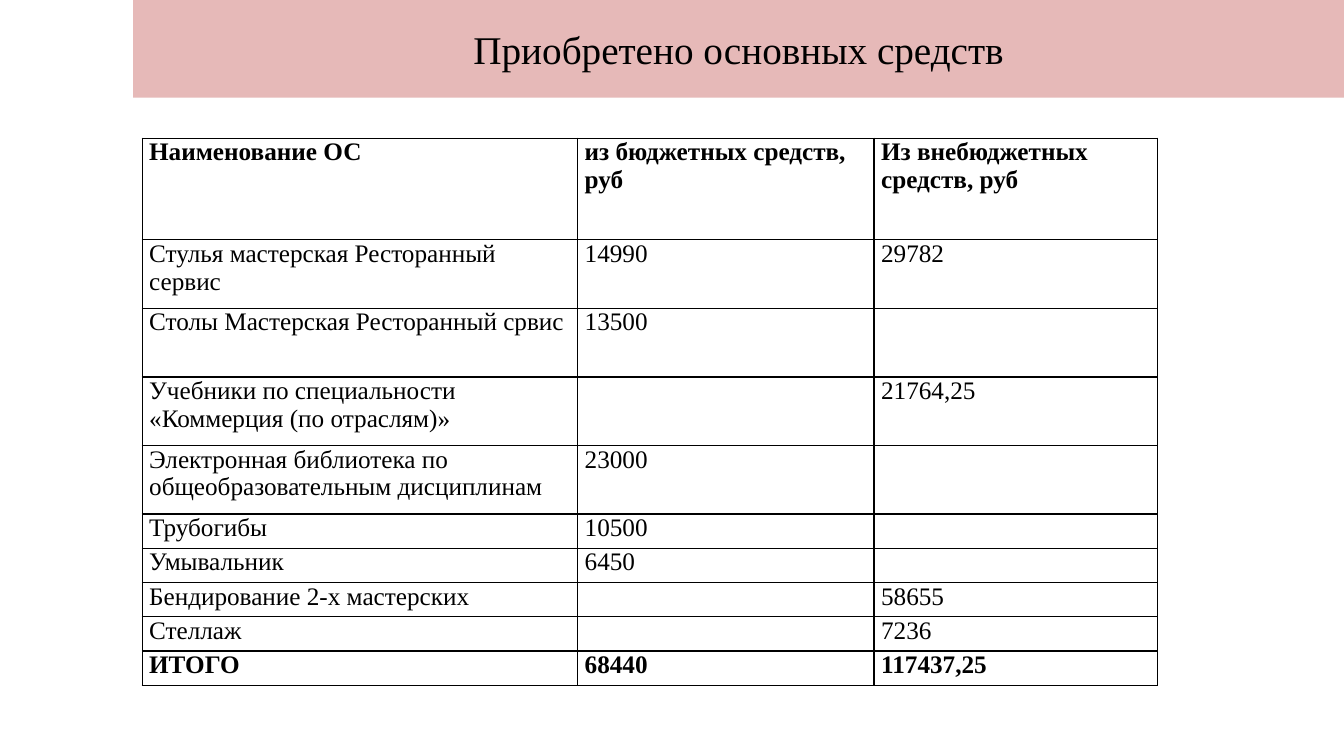
from typing import Any, NamedTuple

from lxml import etree
from pptx import Presentation
from pptx.dml.color import RGBColor
from pptx.enum.shapes import MSO_SHAPE
from pptx.enum.text import MSO_ANCHOR, PP_ALIGN
from pptx.oxml.ns import qn
from pptx.util import Inches, Pt

RECT = MSO_SHAPE.RECTANGLE
MIDDLE, TOP = MSO_ANCHOR.MIDDLE, MSO_ANCHOR.TOP
CENTER, LEFT = PP_ALIGN.CENTER, PP_ALIGN.LEFT

COLORS = {"band": "E6B9B8", "ink": "000000"}
FONT = "Times New Roman"
WIDTHS = (4.32, 2.94, 2.81)
SINGLE, DOUBLE, HEAD = 0.34, 0.68, 1.01
CELL = {
    "margin_left": Inches(0.07),
    "margin_right": Inches(0.07),
    "margin_top": 0,
    "margin_bottom": 0,
    "vertical_anchor": TOP,
}


class Item(NamedTuple):
    name: str
    budget: str
    extra: str
    height: float = SINGLE
    bold: bool = False


ITEMS = [
    Item("Наименование ОС", "из бюджетных средств, руб",
         "Из внебюджетных средств, руб", HEAD, True),
    Item("Стулья мастерская Ресторанный сервис", "14990", "29782", DOUBLE),
    Item("Столы Мастерская Ресторанный срвис", "13500", "", DOUBLE),
    Item("Учебники по специальности «Коммерция (по отраслям)»", "",
         "21764,25", DOUBLE),
    Item("Электронная библиотека по общеобразовательным дисциплинам",
         "23000", "", DOUBLE),
    Item("Трубогибы", "10500", ""),
    Item("Умывальник", "6450", ""),
    Item("Бендирование 2-х мастерских", "", "58655"),
    Item("Стеллаж", "", "7236"),
    Item("ИТОГО", "68440", "117437,25", bold=True),
]


def apply(target: Any, values: dict[str, Any]) -> None:
    for key, value in values.items():
        setattr(target, key, value)


def write(frame: Any, text: str, size: int, bold: bool, align: Any) -> None:
    para = frame.paragraphs[0]
    para.alignment = align
    if text:
        run = para.add_run()
        run.text = text
        apply(run.font, {"name": FONT, "size": Pt(size), "bold": bold})
        run.font.color.rgb = RGBColor.from_string(COLORS["ink"])


def border(cell: Any) -> None:
    """Rule all four sides; the lines must precede the fill in the XML."""
    props = cell._tc.get_or_add_tcPr()
    for index, side in enumerate(("lnL", "lnR", "lnT", "lnB")):
        line = etree.Element(qn(f"a:{side}"), w=str(Pt(1)))
        fill = etree.SubElement(line, qn("a:solidFill"))
        etree.SubElement(fill, qn("a:srgbClr"), val=COLORS["ink"])
        props.insert(index, line)


def add_title(slide: Any) -> None:
    band = slide.shapes.add_shape(
        RECT, Inches(1.32), 0, Inches(12.01), Inches(0.97))
    band.shadow.inherit = False
    band.fill.solid()
    band.fill.fore_color.rgb = RGBColor.from_string(COLORS["band"])
    band.line.fill.background()
    apply(band.text_frame, {"word_wrap": True, "vertical_anchor": MIDDLE})
    write(band.text_frame, "Приобретено основных средств", 28, False, CENTER)


def add_grid(slide: Any) -> None:
    table = slide.shapes.add_table(
        len(ITEMS), len(WIDTHS), Inches(1.41), Inches(1.37),
        Inches(sum(WIDTHS)), Inches(sum(item.height for item in ITEMS))).table
    apply(table, {"first_row": False, "horz_banding": False})
    for column, width in zip(table.columns, WIDTHS):
        column.width = Inches(width)
    for row, item in zip(table.rows, ITEMS):
        row.height = Inches(item.height)
        for cell, text in zip(row.cells, (item.name, item.budget, item.extra)):
            apply(cell, CELL)
            cell.fill.background()
            border(cell)
            write(cell.text_frame, text, 18, item.bold, LEFT)


def main() -> None:
    deck = Presentation()
    apply(deck, {"slide_width": Inches(13.33), "slide_height": Inches(7.5)})
    slide = deck.slides.add_slide(deck.slide_layouts[6])
    add_title(slide)
    add_grid(slide)
    deck.save("out.pptx")


if __name__ == "__main__":
    main()
